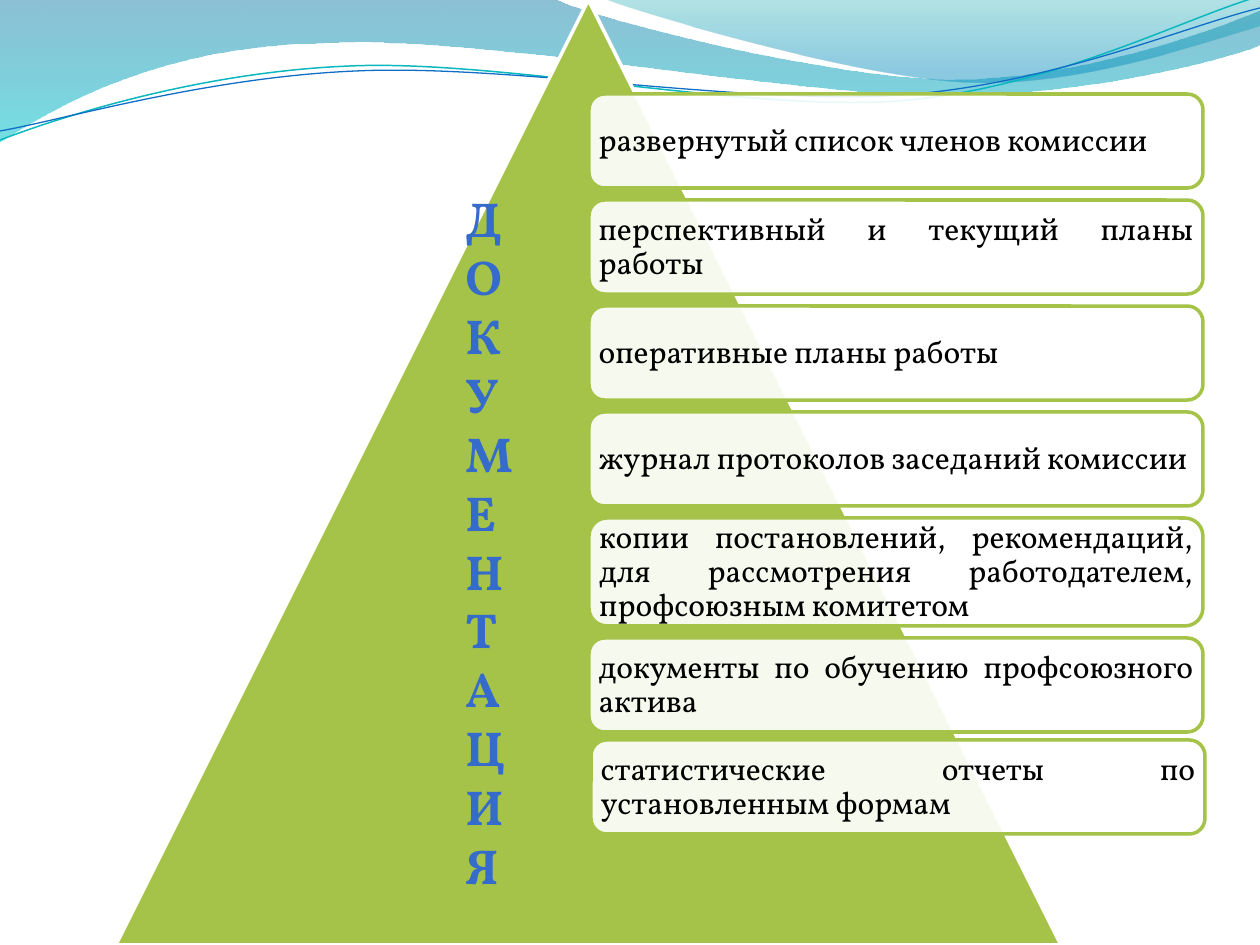
import pptx
import pptx.util
import lxml.etree
from pptx.dml.color import RGBColor
from pptx.enum.shapes import MSO_SHAPE
from pptx.enum.text import MSO_ANCHOR, MSO_AUTO_SIZE, PP_ALIGN
from pptx.oxml.ns import qn

TITLE = "ДОКУМЕНТАЦИЯ"
PAPERS = [
    # text, height, shift right, shift down
    ("развернутый список членов комиссии", 94, 0, 0),
    ("перспективный и текущий планы работы", 94, 0, 0),
    ("оперативные планы работы", 94, 0, 0),
    ("журнал протоколов заседаний комиссии", 94, 0, 0),
    ("копии постановлений, рекомендаций, для рассмотрения работодателем, "
     "профсоюзным комитетом", 108, 0, 0),
    ("документы по обучению профсоюзного актива", 94, 0, 0),
    ("статистические отчеты по установленным формам", 94, 2, -4),
]
COLORS = {"white": "FFFFFF", "green": "A5C249", "black": "000000",
          "title": "356BCA", "teal": "0AB8BF", "blue": "0F6FC6",
          "deep": "0074A1", "cyan": "00C6CF", "sea": "00A1A9",
          "sky": "008BBF"}
FONT = "Vollkorn"

# Each step holds one point (a line) or three (a cubic curve).
WAVES = [
    ([[(0, 0)], [(554, -1)],
      [(600, 21), (837, 79), (955, 79)],
      [(1075, 79), (1207, 33), (1260, 11)], [(1261, 45)],
      [(1239, 55), (1096, 96), (940, 95)],
      [(784, 95), (481, 35), (324, 43)],
      [(163, 45), (58, 105), (-1, 142)]],
     [(0, "deep", 45), (1, "cyan", 55)]),
    ([[(604, -1)],
      [(641, 14), (859, 78), (969, 82)],
      [(1079, 87), (1211, 40), (1260, 26)], [(1260, 0)]],
     [(0, "sea", 30), (0.8, "sky", 45)]),
]
STROKES = [
    ([[(0, 140)],
      [(60, 117), (199, 72), (349, 66)],
      [(498, 59), (747, 112), (898, 101)],
      [(1050, 89), (1182, 19), (1257, -3)]], "teal", 0.85),
    ([[(0, 131)],
      [(59, 121), (207, 77), (357, 71)],
      [(508, 64), (752, 106), (903, 95)],
      [(1053, 84), (1186, 26), (1260, 8)]], "blue", 0.75),
]

SCALE = 914400 / 126
LEFT, TOP, WIDTH, GAP = 589, 94, 614, 12


def px(num):
    return round(num * SCALE)


def rgb(name):
    return RGBColor.from_string(COLORS[name])


def fade(clr, percent):
    """Set the opacity of a colour element."""
    lxml.etree.SubElement(clr, qn("a:alpha")).set("val", str(percent * 1000))


def bend(shape, steps):
    """Join the three lines of each curved step into one cubic curve."""
    lines = iter(list(shape._element.iter(qn("a:lnTo"))))
    for step in steps[1:]:
        parts = [next(lines) for _ in step]
        if len(parts) == 3:
            first = parts[0]
            curve = first.makeelement(qn("a:cubicBezTo"))
            first.addprevious(curve)
            for part in parts:
                curve.append(part[0])
                part.getparent().remove(part)


def draw(shapes, steps, close):
    pts = [(px(x), px(y)) for step in steps for x, y in step]
    pen = shapes.build_freeform(*pts[0], scale=1.0)
    pen.add_line_segments(pts[1:], close=close)
    shape = pen.convert_to_shape()
    shape.shadow.inherit = False
    bend(shape, steps)
    return shape


def add_wave(shapes, steps, stops):
    shape = draw(shapes, steps, True)
    shape.line.fill.background()
    shape.fill.gradient()
    shape.fill.gradient_angle = 270
    for stop, (pos, color, _) in zip(shape.fill.gradient_stops, stops):
        stop.position = pos
        stop.color.rgb = rgb(color)
    tints = shape._element.spPr.iter(qn("a:srgbClr"))
    for clr, (_, _, alpha) in zip(tints, stops):
        fade(clr, alpha)


def add_stroke(shapes, steps, color, width):
    shape = draw(shapes, steps, False)
    shape.fill.background()
    shape.line.color.rgb = rgb(color)
    shape.line.width = pptx.util.Pt(width)


def add_block(shapes, kind, box, fill, line):
    shape = shapes.add_shape(kind, *map(px, box))
    shape.shadow.inherit = False
    shape.fill.solid()
    shape.fill.fore_color.rgb = rgb(fill)
    shape.line.color.rgb = rgb(line)
    shape.line.width = pptx.util.Pt(2)
    return shape


def style(para, size, color, bold=False):
    para.font.name = FONT
    para.font.size = pptx.util.Pt(size)
    para.font.bold = bold
    para.font.color.rgb = rgb(color)


def add_paper(shapes, text, box):
    shape = add_block(shapes, MSO_SHAPE.ROUNDED_RECTANGLE, box,
                      "white", "green")
    fade(shape._element.spPr.find(qn("a:solidFill"))[0], 90)
    frame = shape.text_frame
    frame.word_wrap = True
    frame.vertical_anchor = MSO_ANCHOR.MIDDLE
    frame.margin_left = frame.margin_right = px(5)
    frame.margin_top = frame.margin_bottom = px(4)
    para = frame.paragraphs[0]
    para.text = text
    para.alignment = PP_ALIGN.JUSTIFY
    para.line_spacing = 0.9
    style(para, 18, "black")


def add_title(shapes):
    frame = shapes.add_textbox(*map(px, (453, 98, 96, 886))).text_frame
    frame.word_wrap = True
    frame.auto_size = MSO_AUTO_SIZE.SHAPE_TO_FIT_TEXT
    frame.vertical_anchor = MSO_ANCHOR.MIDDLE
    frame._txBody.bodyPr.set("vert", "wordArtVert")
    para = frame.paragraphs[0]
    para.text = TITLE
    style(para, 28, "title", True)


def main():
    deck = pptx.Presentation()
    deck.slide_width, deck.slide_height = px(1260), px(945)
    shapes = deck.slides.add_slide(deck.slide_layouts[6]).shapes
    for wave in WAVES:
        add_wave(shapes, *wave)
    for stroke in STROKES:
        add_stroke(shapes, *stroke)
    add_block(shapes, MSO_SHAPE.ISOSCELES_TRIANGLE, (116, 0, 945, 945),
              "green", "white")
    top = TOP
    for text, height, right, down in PAPERS:
        add_paper(shapes, text, (LEFT + right, top + down, WIDTH, height))
        top += height + GAP
    add_title(shapes)
    deck.save("out.pptx")


if __name__ == "__main__":
    main()
